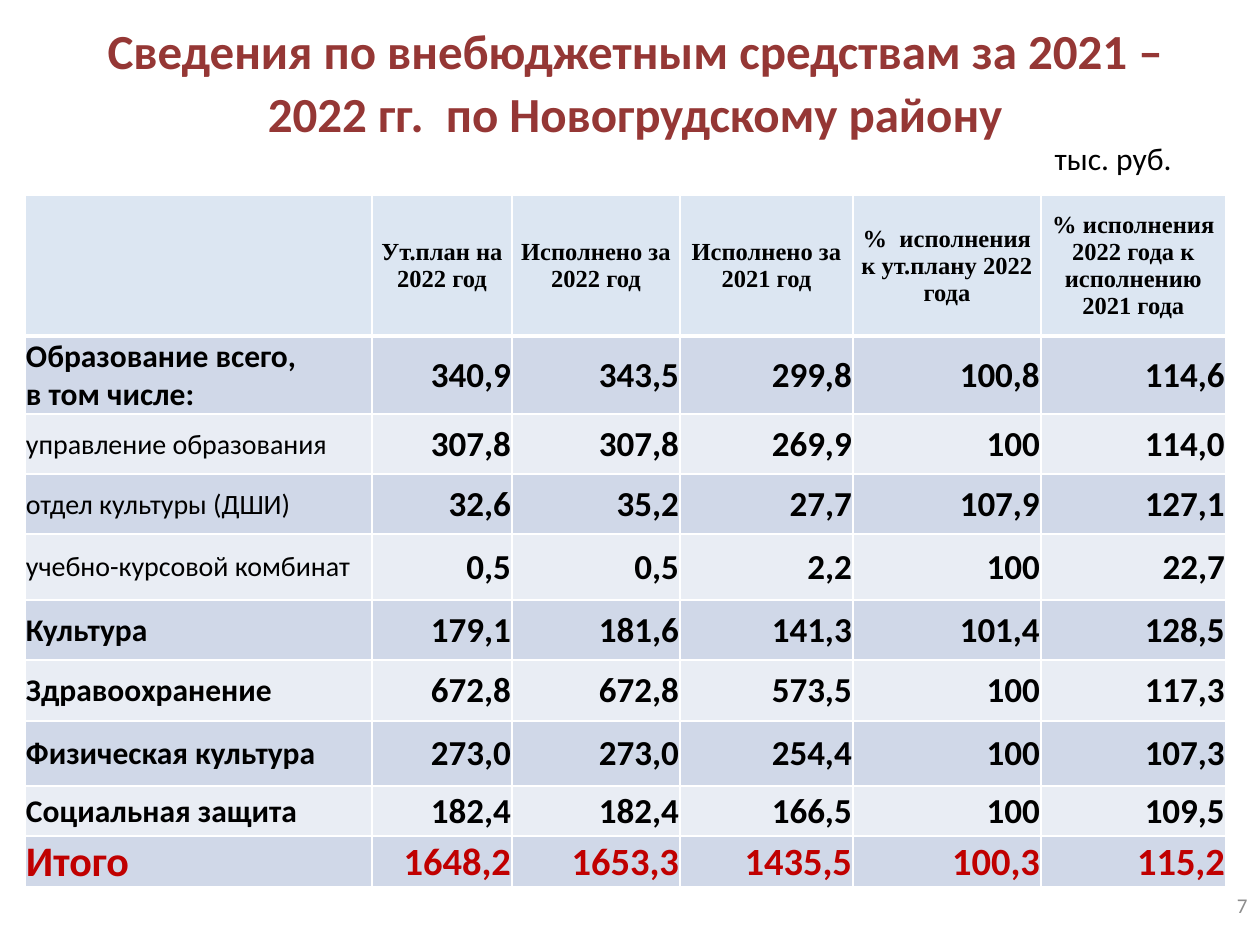
from lxml.etree import SubElement
from pptx import Presentation
from pptx.dml.color import RGBColor
from pptx.enum.text import MSO_ANCHOR, PP_ALIGN
from pptx.oxml.ns import qn
from pptx.util import Emu, Pt

PIXELS_PER_INCH = 126
BLACK = RGBColor(0x00, 0x00, 0x00)
GREY = RGBColor(0x8C, 0x8C, 0x8C)
WHITE = RGBColor(0xFF, 0xFF, 0xFF)
MAROON = RGBColor(0x95, 0x37, 0x35)
RED = RGBColor(0xC0, 0x00, 0x00)
HEADER_FILL = RGBColor(0xDC, 0xE6, 0xF2)
BAND_FILLS = (RGBColor(0xD0, 0xD8, 0xE8), RGBColor(0xE9, 0xED, 0xF4))

COLUMN_WIDTHS = (347, 140, 168, 173, 188, 185)
ROW_HEIGHTS = (141, 78, 60, 60, 66, 60, 61, 65, 50, 51)
HEADERS = (
    "",
    "Ут.план на 2022 год",
    "Исполнено за 2022 год",
    "Исполнено за 2021 год",
    "%  исполнения к ут.плану 2022 года",
    "% исполнения 2022 года к исполнению 2021 года",
)

# Row styles: label size, label bold, number size, colour
GROUP = (18, True, 20, BLACK)
DETAIL = (16, False, 20, BLACK)
TOTAL = (24, True, 22, RED)
ROWS = (
    (GROUP, "Образование всего,\nв том числе:", "340,9", "343,5", "299,8", "100,8", "114,6"),
    (DETAIL, "управление образования", "307,8", "307,8", "269,9", "100", "114,0"),
    (DETAIL, "отдел культуры (ДШИ)", "32,6", "35,2", "27,7", "107,9", "127,1"),
    (DETAIL, "учебно-курсовой комбинат", "0,5", "0,5", "2,2", "100", "22,7"),
    (GROUP, "Культура", "179,1", "181,6", "141,3", "101,4", "128,5"),
    (GROUP, "Здравоохранение", "672,8", "672,8", "573,5", "100", "117,3"),
    (GROUP, "Физическая культура", "273,0", "273,0", "254,4", "100", "107,3"),
    (GROUP, "Социальная защита", "182,4", "182,4", "166,5", "100", "109,5"),
    (TOTAL, "Итого", "1648,2", "1653,3", "1435,5", "100,3", "115,2"),
)


def px(length):
    return Emu(round(length * 914400 / PIXELS_PER_INCH))


def place(shape, left, top, width, height):
    shape.left, shape.top = px(left), px(top)
    shape.width, shape.height = px(width), px(height)


def write_text(text_frame, text, size, color, bold=False,
               alignment=PP_ALIGN.LEFT, font_name="Calibri"):
    for index, line in enumerate(text.split("\n")):
        paragraph = text_frame.add_paragraph() if index else text_frame.paragraphs[0]
        paragraph.alignment = alignment
        run = paragraph.add_run()
        run.text = line
        run.font.name = font_name
        run.font.size = Pt(size)
        run.font.bold = bold
        run.font.italic = False
        run.font.color.rgb = color


def add_title(slide, text):
    title = slide.shapes.title
    place(title, 68, 16, 1134, 126)
    text_frame = title.text_frame
    text_frame.word_wrap = True
    text_frame.vertical_anchor = MSO_ANCHOR.MIDDLE
    text_frame.margin_top = text_frame.margin_bottom = 0
    write_text(text_frame, text, 28, MAROON, True, PP_ALIGN.CENTER)
    text_frame.paragraphs[0].line_spacing = Pt(36)


def add_label(slide, text, box, size, color):
    label = slide.shapes.add_textbox(0, 0, 0, 0)
    place(label, *box)
    label.text_frame.word_wrap = True
    label.text_frame.vertical_anchor = MSO_ANCHOR.MIDDLE
    write_text(label.text_frame, text, size, color, alignment=PP_ALIGN.RIGHT)


def set_borders(cell, top=1, bottom=1):
    properties = cell._tc.get_or_add_tcPr()
    widths = (("a:lnL", 1), ("a:lnR", 1), ("a:lnT", top), ("a:lnB", bottom))
    for index, (tag, width) in enumerate(widths):
        line = SubElement(properties, qn(tag), w=str(Pt(width)))
        fill = SubElement(line, qn("a:solidFill"))
        SubElement(fill, qn("a:srgbClr"), val=str(WHITE))
        properties.insert(index, line)


def format_cell(cell, fill, top=1, bottom=1):
    cell.fill.solid()
    cell.fill.fore_color.rgb = fill
    cell.vertical_anchor = MSO_ANCHOR.MIDDLE
    cell.margin_left = cell.margin_right = cell.margin_top = px(1)
    cell.margin_bottom = 0
    set_borders(cell, top, bottom)


def add_funds_table(slide):
    frame = slide.shapes.add_table(
        len(ROW_HEIGHTS), len(COLUMN_WIDTHS),
        px(25), px(195), px(sum(COLUMN_WIDTHS)), px(sum(ROW_HEIGHTS)))
    table = frame.table
    for column, width in zip(table.columns, COLUMN_WIDTHS):
        column.width = px(width)
    for row, height in zip(table.rows, ROW_HEIGHTS):
        row.height = px(height)

    # Header row
    for cell, header in zip(table.rows[0].cells, HEADERS):
        format_cell(cell, HEADER_FILL, bottom=3)
        if header:
            write_text(cell.text_frame, header, 14, BLACK, True,
                       PP_ALIGN.CENTER, "Times New Roman")

    # Banded body rows
    for index, (style, label, *numbers) in enumerate(ROWS):
        label_size, label_bold, number_size, color = style
        cells = list(table.rows[index + 1].cells)
        for cell in cells:
            format_cell(cell, BAND_FILLS[index % 2], top=1 if index else 3)
        write_text(cells[0].text_frame, label, label_size, color, label_bold)
        for cell, number in zip(cells[1:], numbers):
            write_text(cell.text_frame, number, number_size, color, True, PP_ALIGN.RIGHT)
    table.cell(1, 0).vertical_anchor = MSO_ANCHOR.BOTTOM


def main():
    presentation = Presentation()
    presentation.slide_width, presentation.slide_height = px(1260), px(945)
    slide = presentation.slides.add_slide(presentation.slide_layouts[5])
    add_title(slide, "Сведения по внебюджетным средствам за 2021 – 2022 гг.  по Новогрудскому району")
    add_label(slide, "тыс. руб.", (983, 133, 201, 50), 18, BLACK)
    add_funds_table(slide)
    add_label(slide, "7", (967, 880, 293, 50), 12, GREY)
    presentation.save("out.pptx")


if __name__ == "__main__":
    main()
